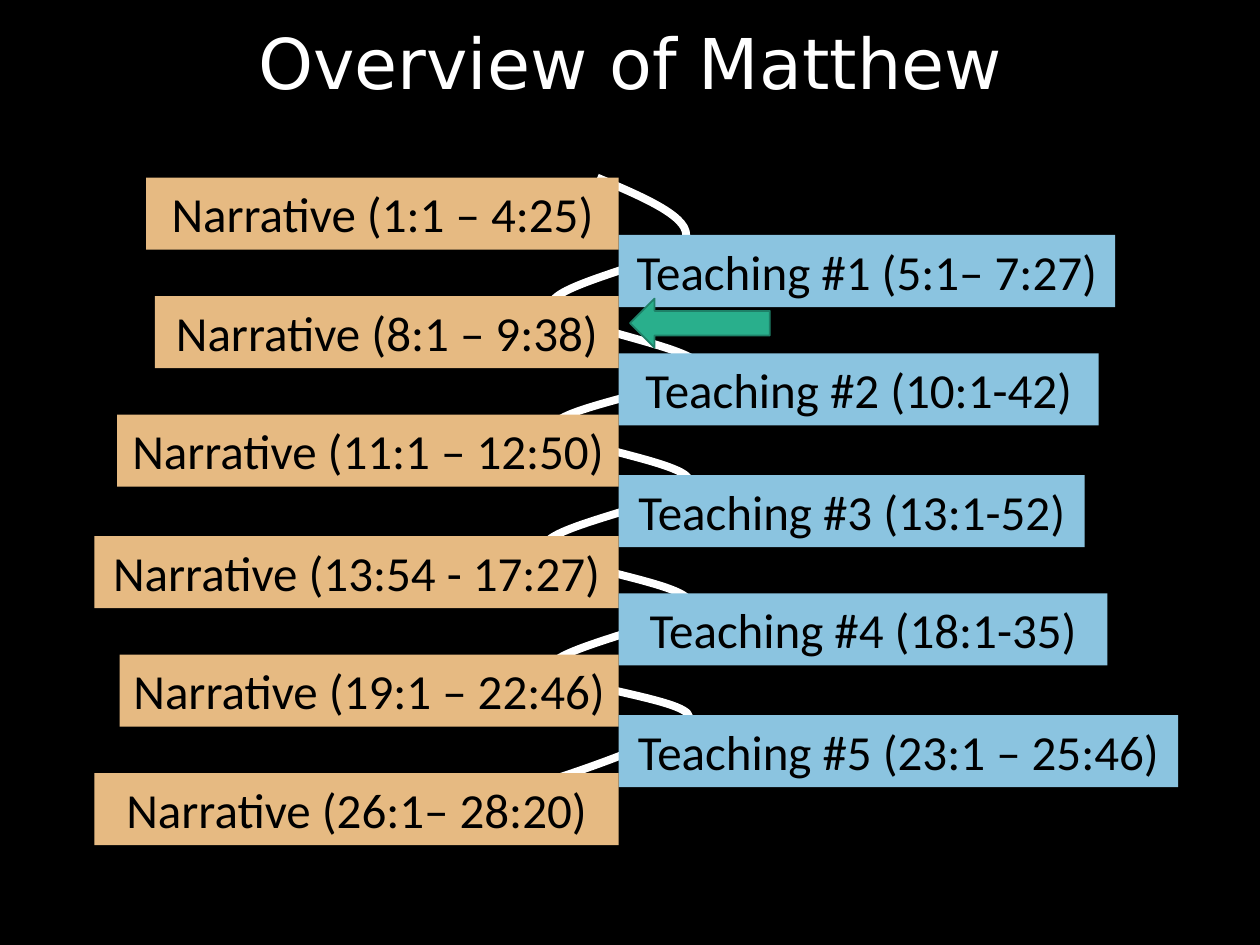
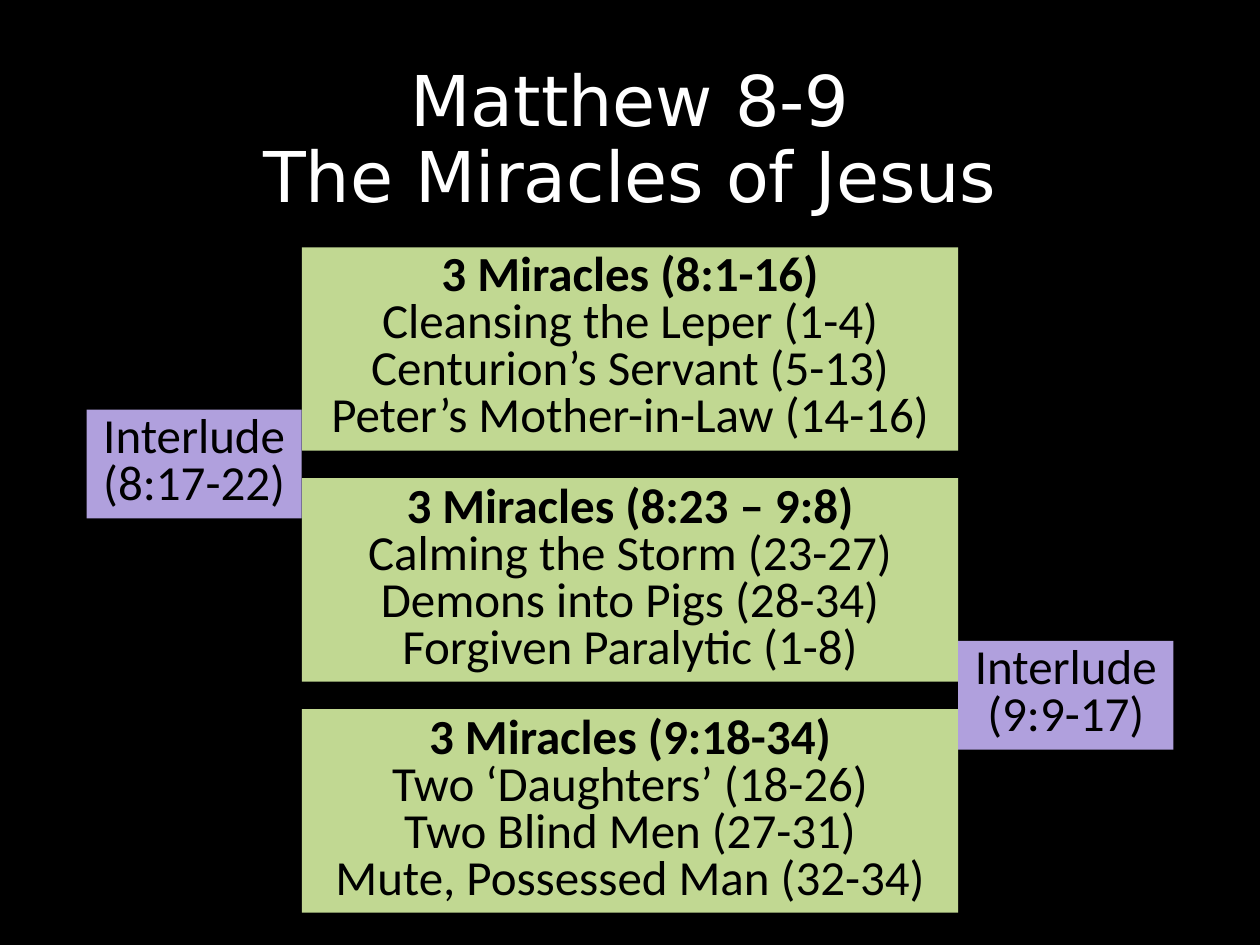
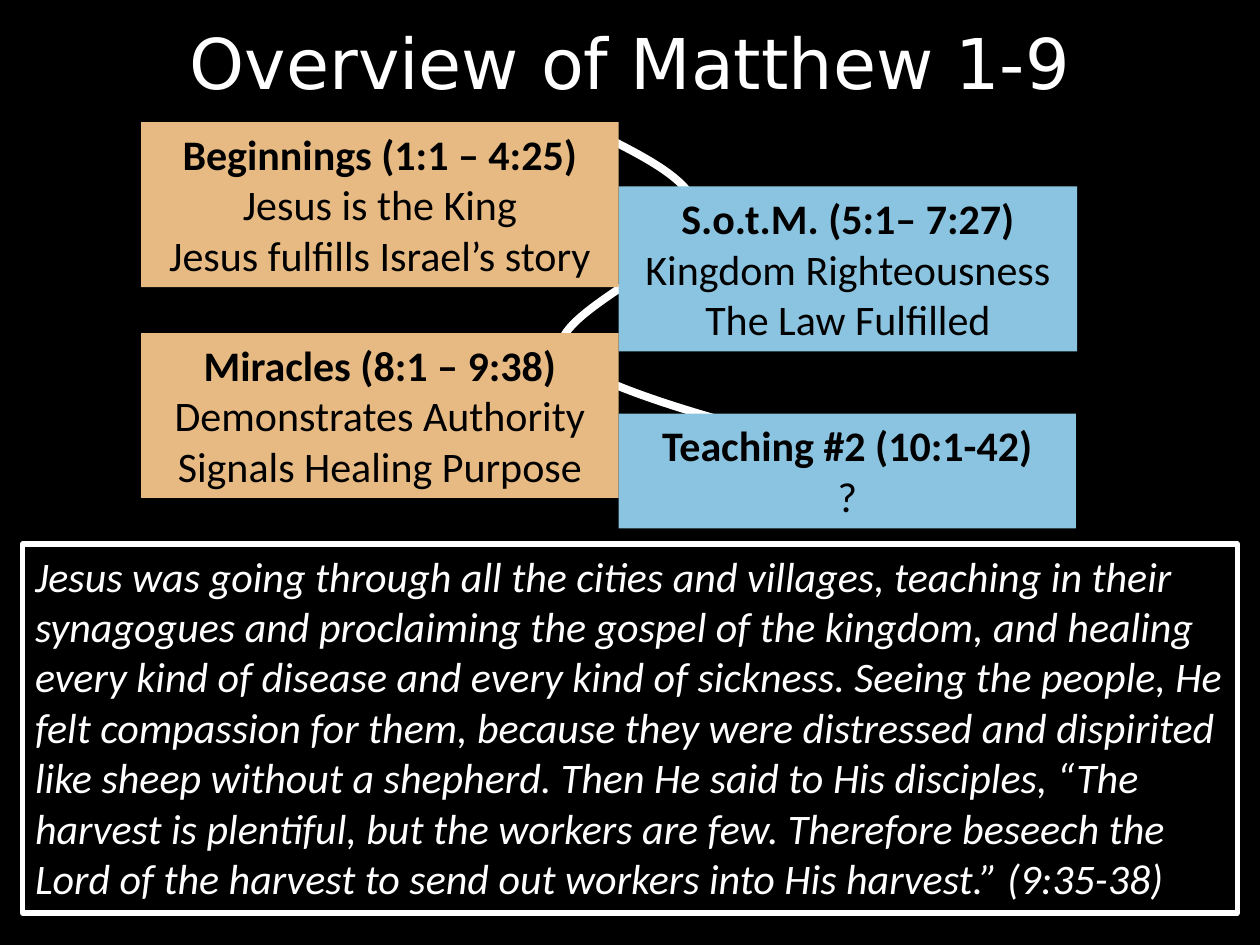
from lxml import etree
from pptx import Presentation
from pptx.dml.color import RGBColor
from pptx.enum.shapes import MSO_SHAPE
from pptx.enum.text import MSO_ANCHOR, MSO_AUTO_SIZE, PP_ALIGN
from pptx.oxml.ns import qn
from pptx.util import Inches, Pt

BLACK = RGBColor(0x00, 0x00, 0x00)
WHITE = RGBColor(0xFF, 0xFF, 0xFF)
SAND = RGBColor(0xE6, 0xBA, 0x82)
SKY = RGBColor(0x8B, 0xC4, 0xE0)
LEAF = RGBColor(0xC1, 0xD8, 0x92)
LILAC = RGBColor(0xB0, 0xA0, 0xDD)
TEAL = RGBColor(0x29, 0xAF, 0x8C)
DEEP_TEAL = RGBColor(0x1E, 0x81, 0x68)

RECTANGLE, RIGHT_ARROW = MSO_SHAPE.RECTANGLE, MSO_SHAPE.RIGHT_ARROW
CENTER, LEFT = PP_ALIGN.CENTER, PP_ALIGN.LEFT
MIDDLE, TOP = MSO_ANCHOR.MIDDLE, MSO_ANCHOR.TOP
GROW, FIXED = MSO_AUTO_SIZE.SHAPE_TO_FIT_TEXT, MSO_AUTO_SIZE.NONE

COLUMNS, ROWS = 100, 75
SPINE = 49.1
TITLE_ONLY = 5

TITLE_FONT = {"name": "DejaVu Sans", "size": Pt(40)}
LARGE_FONT = {"name": "Calibri", "size": Pt(28)}
SMALL_FONT = {"name": "Calibri", "size": Pt(24)}
VERSE_FONT = {**SMALL_FONT, "italic": True}
TITLE_FRAME = {"vertical_anchor": MIDDLE, "auto_size": FIXED, "word_wrap": True}
BOX_FRAME = {"auto_size": GROW, "word_wrap": True}

PASSAGES = [
    ("Teaching #1 (5:1– 7:27)", 18.65, 39.4),
    ("Narrative (1:1 – 4:25)", 14.1, 37.5),
    ("Teaching #2 (10:1-42)", 28.05, 38.1),
    ("Narrative (8:1 – 9:38)", 23.5, 36.8),
    ("Teaching #3 (13:1-52)", 37.7, 37),
    ("Narrative (11:1 – 12:50)", 32.9, 39.8),
    ("Narrative (13:54 - 17:27)", 42.55, 41.6),
    ("Teaching #4 (18:1-35)", 47.1, 38.8),
    ("Narrative (19:1 – 22:46)", 51.95, 39.6),
    ("Teaching #5 (23:1 – 25:46)", 56.75, 44.4),
    ("Narrative (26:1– 28:20)", 61.35, 41.6),
]
BOOK_PATH = [
    (47.4, 14.1), (54.4, 19), (43.8, 24.2), (55.5, 29.1), (44, 33.8), (54.7, 38.2),
    (43.3, 43.3), (54.7, 47.8), (43.8, 52.9), (54.7, 56.9), (44.1, 61.8),
]
MIRACLES = [
    (["3 Miracles (8:1-16)", "Cleansing the Leper (1-4)",
      "Centurion’s Servant (5-13)", "Peter’s Mother-in-Law (14-16)"], TOP),
    (["3 Miracles (8:23 – 9:8)", "Calming the Storm (23-27)",
      "Demons into Pigs (28-34)", "Forgiven Paralytic (1-8)"], MIDDLE),
    (["3 Miracles (9:18-34)", "Two ‘Daughters’ (18-26)",
      "Two Blind Men (27-31)", "Mute, Possessed Man (32-34)"], MIDDLE),
]
INTERLUDES = [
    (["Interlude ", "(8:17-22)"], 6.87, 32.52),
    (["Interlude ", "(9:9-17)"], 76.05, 50.87),
]
CHAPTERS = [
    (["S.o.t.M. (5:1– 7:27)", "Kingdom Righteousness", "The Law Fulfilled"],
     (SPINE, 14.8, 36.4, 13.1), SKY),
    (["Beginnings (1:1 – 4:25)", "Jesus is the King", "Jesus fulfills Israel’s story"],
     (11.2, 9.7, 37.9, 13.1), SAND),
    (["Miracles (8:1 – 9:38)", "Demonstrates Authority", "Signals Healing Purpose"],
     (11.2, 26.43, 37.9, 13.1), SAND),
    (["Teaching #2 (10:1-42)", "?"], (SPINE, 32.83, 36.3, 9.1), SKY),
]
CHAPTER_PATH = [(48.1, 10.9), (55.3, 17.7), (44.6, 27.8), (61.2, 34.4)]
VERSE = (
    "Jesus was going through all the cities and villages, teaching in their synagogues "
    "and proclaiming the gospel of the kingdom, and healing every kind of disease and "
    "every kind of sickness. Seeing the people, He felt compassion for them, because they "
    "were distressed and dispirited like sheep without a shepherd. Then He said to His "
    "disciples, “The harvest is plentiful, but the workers are few. Therefore beseech the "
    "Lord of the harvest to send out workers into His harvest.” (9:35-38)"
)


def apply(target, values):
    """Set each named attribute of the target."""
    for name, value in values.items():
        setattr(target, name, value)


def spread(first, last, count):
    """Return evenly spaced positions from first to last."""
    return [first + (last - first) * i / (count - 1) for i in range(count)]


def smooth(knots):
    """Return two handles and an end for each curved piece between knots."""
    tangents = [tuple((b - a) / 6 for a, b in zip(before, after))
                for before, after in zip(knots, knots[2:])]
    points = []
    for i, (start, end) in enumerate(zip(knots, knots[1:])):
        arrive = end
        if i < len(tangents):
            arrive = tuple(e - t for e, t in zip(end, tangents[i]))
        if i > 0:
            leave = tuple(s + t for s, t in zip(start, tangents[i - 1]))
        else:
            leave = tuple((s + a) / 2 for s, a in zip(start, arrive))
        points += [leave, arrive, end]
    return points


class Deck:
    """Hold the shared style and draw on the current slide."""

    def __init__(self):
        """Open a black deck and measure its grid."""
        self.prs = Presentation()
        apply(self.prs, {"slide_width": Inches(10), "slide_height": Inches(7.5)})
        backdrop = self.prs.slide_master.background.fill
        backdrop.solid()
        backdrop.fore_color.rgb = BLACK
        self.column = self.prs.slide_width / COLUMNS
        self.row = self.prs.slide_height / ROWS
        self.slide = None

    def place(self, left, top, width, height):
        """Turn grid positions into slide lengths."""
        return [round(n * unit) for n, unit in zip(
            (left, top, width, height), (self.column, self.row) * 2)]

    def style(self, paragraph, font, color, align, spacing):
        """Format one paragraph and its runs."""
        apply(paragraph, {"alignment": align, "line_spacing": spacing})
        for run in paragraph.runs:
            apply(run.font, font)
            run.font.color.rgb = color

    def paint(self, shape, fill=None, line=None, weight=1):
        """Give a shape its fill and outline without a shadow."""
        shape.shadow.inherit = False
        if fill is None:
            shape.fill.background()
        else:
            shape.fill.solid()
            shape.fill.fore_color.rgb = fill
        if line is None:
            shape.line.fill.background()
        else:
            shape.line.color.rgb = line
            shape.line.width = Pt(weight)

    def new_slide(self, title, top=1.4, height=7.8):
        """Start a slide with its centred title."""
        self.slide = self.prs.slides.add_slide(self.prs.slide_layouts[TITLE_ONLY])
        heading = self.slide.shapes.title
        apply(heading, dict(zip(("left", "top", "width", "height"),
                                self.place(6.9, top, 86.2, height))))
        apply(heading.text_frame, TITLE_FRAME)
        heading.text_frame.text = title
        self.style(heading.text_frame.paragraphs[0], TITLE_FONT, WHITE, CENTER, 0.9)

    def box(self, lines, area, fill=None, font=LARGE_FONT, color=BLACK, align=CENTER,
            anchor=TOP, spacing=1.0, headed=False, line=None, weight=1):
        """Add a rectangle of text, with a bold first line if headed."""
        shape = self.slide.shapes.add_shape(RECTANGLE, *self.place(*area))
        self.paint(shape, fill, line, weight)
        apply(shape.text_frame, {**BOX_FRAME, "vertical_anchor": anchor})
        shape.text_frame.text = "\n".join(lines)
        for i, paragraph in enumerate(shape.text_frame.paragraphs):
            self.style(paragraph, {**font, "bold": headed and i == 0},
                       color, align, spacing)

    def curve(self, knots):
        """Add the white winding line through the knots, behind the title."""
        points = [(x * self.column, y * self.row) for x, y in [knots[0], *smooth(knots)]]
        builder = self.slide.shapes.build_freeform(*points[0])
        builder.add_line_segments(points[1:], close=False)
        winding = builder.convert_to_shape()
        self.paint(winding, line=WHITE, weight=4.5)
        outline = winding.element.find(".//" + qn("a:path"))
        pieces = outline.findall(qn("a:lnTo"))
        for i in range(0, len(pieces), 3):
            bend = etree.SubElement(outline, qn("a:cubicBezTo"))
            for piece in pieces[i:i + 3]:
                bend.append(piece[0])
                outline.remove(piece)
        self.slide.shapes.title.element.addprevious(winding.element)

    def pointer(self, area):
        """Add the arrow that points left."""
        arrow = self.slide.shapes.add_shape(RIGHT_ARROW, *self.place(*area))
        arrow.rotation = 180
        self.paint(arrow, TEAL, DEEP_TEAL)


def book_overview(deck):
    """Draw narratives and teachings on both sides of the spine."""
    deck.new_slide("Overview of Matthew")
    deck.curve(BOOK_PATH)
    for passage, top, width in PASSAGES:
        if passage.startswith("Teaching"):
            left, fill = SPINE, SKY
        else:
            left, fill = SPINE - width, SAND
        deck.box([passage], (left, top, width, 5.72), fill)
    deck.pointer((50, 23.7, 11.1, 3.9))


def miracles(deck):
    """Draw the three groups of miracles and the interludes."""
    deck.new_slide("Matthew 8-9\vThe Miracles of Jesus", 4, 14.5)
    for (group, anchor), top in zip(MIRACLES, spread(19.63, 56.28, len(MIRACLES))):
        deck.box(group, (23.95, top, 52.1, 16.15), LEAF, anchor=anchor,
                 spacing=0.8, headed=True)
    for lines, left, top in INTERLUDES:
        deck.box(lines, (left, top, 17.08, 8.63), LILAC, spacing=0.8)


def chapters_overview(deck):
    """Draw the first chapters above the closing verse."""
    deck.new_slide("Overview of Matthew 1-9")
    deck.curve(CHAPTER_PATH)
    for lines, area, fill in CHAPTERS:
        deck.box(lines, area, fill, SMALL_FONT, headed=True)
    deck.box([VERSE], (1.8, 43.17, 96.4, 29.3), font=VERSE_FONT, color=WHITE,
             align=LEFT, line=WHITE, weight=3)


def main():
    """Build the slides and save them."""
    deck = Deck()
    for draw in (book_overview, miracles, chapters_overview):
        draw(deck)
    deck.prs.save("out.pptx")


if __name__ == "__main__":
    main()
